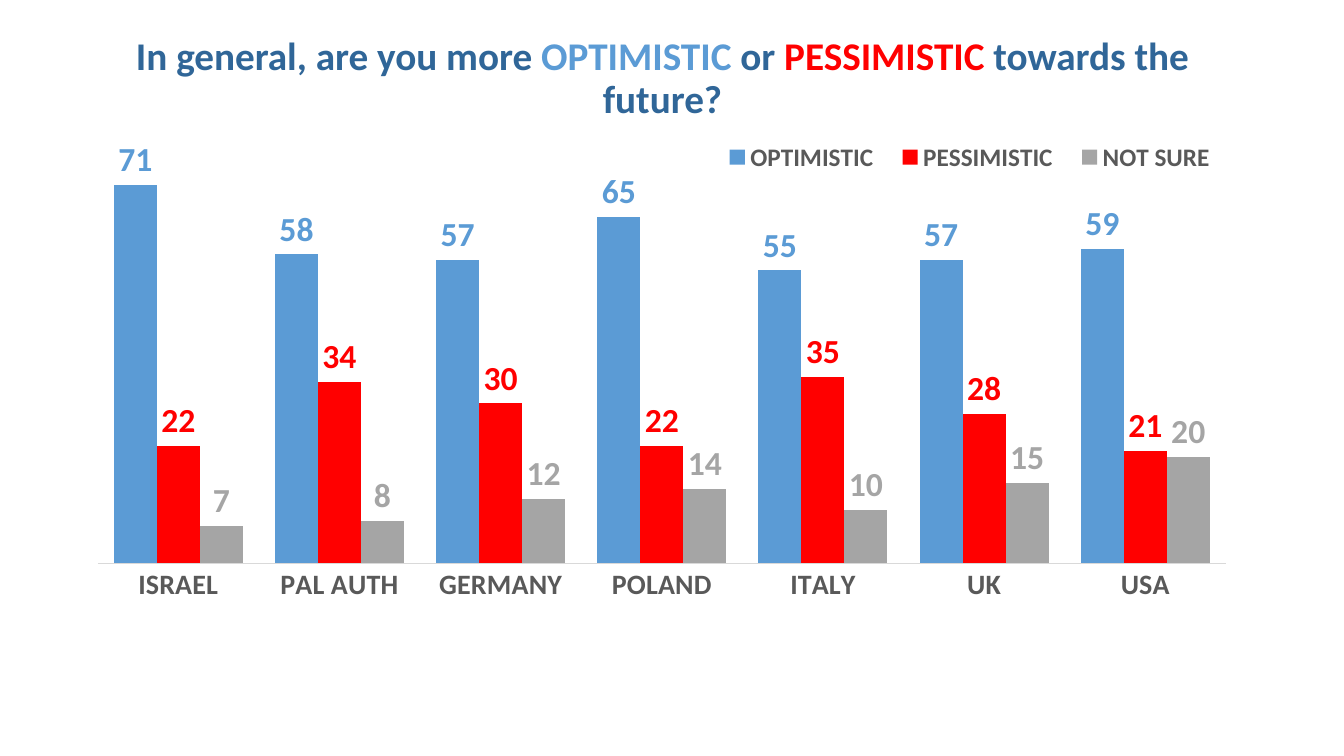
from lxml import etree
from pptx import Presentation
from pptx.chart.data import CategoryChartData
from pptx.dml.color import RGBColor
from pptx.enum import chart as ch, text as tx
from pptx.oxml.ns import qn
from pptx.util import Inches, Pt

NAVY = RGBColor(0x30, 0x66, 0x98)
BLUE = RGBColor(0x5B, 0x9B, 0xD5)
RED = RGBColor(0xFF, 0x00, 0x00)
GRAY = RGBColor(0xA5, 0xA5, 0xA5)
DARK = RGBColor(0x59, 0x59, 0x59)
PALE = RGBColor(0xD9, 0xD9, 0xD9)
FACE = "Calibri"

# Content
TITLE = [
    ("In general, are you more ", NAVY),
    ("OPTIMISTIC", BLUE),
    (" or ", NAVY),
    ("PESSIMISTIC", RED),
    (" towards the future?", NAVY),
]
LANDS = ["ISRAEL", "PAL AUTH", "GERMANY", "POLAND", "ITALY", "UK", "USA"]
MOODS = [
    ("OPTIMISTIC", BLUE, (71, 58, 57, 65, 55, 57, 59)),
    ("PESSIMISTIC", RED, (22, 34, 30, 22, 35, 28, 21)),
    ("NOT SURE", GRAY, (7, 8, 12, 14, 10, 15, 20)),
]


def style(font, size, color):
    font.name, font.size, font.bold = FACE, Pt(size), True
    font.color.rgb = color


def place(part, spot, index, inner=False):
    """Give a chart part a manual layout, as shares of the chart frame."""
    for old in part.findall(qn("c:layout")):
        part.remove(old)
    layout = etree.Element(qn("c:layout"))
    manual = etree.SubElement(layout, qn("c:manualLayout"))
    rules = [("layoutTarget", "inner")] if inner else []
    rules += [("xMode", "edge"), ("yMode", "edge")]
    rules += zip("xywh", spot)
    for tag, val in rules:
        etree.SubElement(manual, qn("c:" + tag)).set("val", str(val))
    part.insert(index, layout)


deck = Presentation()
deck.slide_width, deck.slide_height = Inches(13.33), Inches(7.5)
slide = deck.slides.add_slide(deck.slide_layouts[5])

# Title
title = slide.shapes.title
title.left, title.top = Inches(0.72), Inches(0.34)
title.width, title.height = Inches(11.7), Inches(0.89)
frame = title.text_frame
frame.word_wrap = True
frame.auto_size = tx.MSO_AUTO_SIZE.NONE
frame.vertical_anchor = tx.MSO_ANCHOR.MIDDLE
para = frame.paragraphs[0]
para.alignment = tx.PP_ALIGN.CENTER
para.line_spacing = 0.9
for words, color in TITLE:
    run = para.add_run()
    run.text = words
    style(run.font, 28, color)

# Chart
data = CategoryChartData()
data.categories = LANDS
for name, _, vals in MOODS:
    data.add_series(name, vals)
chart = slide.shapes.add_chart(
    ch.XL_CHART_TYPE.COLUMN_CLUSTERED,
    Inches(0.82), Inches(1.07), Inches(11.5), Inches(5.43), data).chart
chart.has_title = False
chart.font.name, chart.font.size = FACE, Pt(10)
plot = chart.plots[0]
plot.gap_width, plot.overlap = 75, 0
plot.vary_by_categories = False
place(chart.element.find(".//" + qn("c:plotArea")),
      (0.013, 0.054, 0.973, 0.778), 0, inner=True)

# Columns and their labels
for bars, (_, color, _) in zip(plot.series, MOODS):
    bars.format.fill.solid()
    bars.format.fill.fore_color.rgb = color
    bars.invert_if_negative = False
    labels = bars.data_labels
    labels.show_value = True
    labels.position = ch.XL_LABEL_POSITION.OUTSIDE_END
    style(labels.font, 24, color)

# Axes
base = chart.category_axis
base.major_tick_mark = ch.XL_TICK_MARK.NONE
base.format.line.color.rgb = PALE
base.format.line.width = Pt(0.75)
style(base.tick_labels.font, 20, DARK)
scale = chart.value_axis
scale.minimum_scale, scale.maximum_scale = 0, 80
scale.has_major_gridlines = False
scale.visible = False

# Legend
chart.has_legend = True
legend = chart.legend
legend.position = ch.XL_LEGEND_POSITION.BOTTOM
legend.include_in_layout = False
style(legend.font, 18, DARK)
place(legend._element, (0.54, 0.05, 0.45, 0.08), 1)

deck.save("out.pptx")
